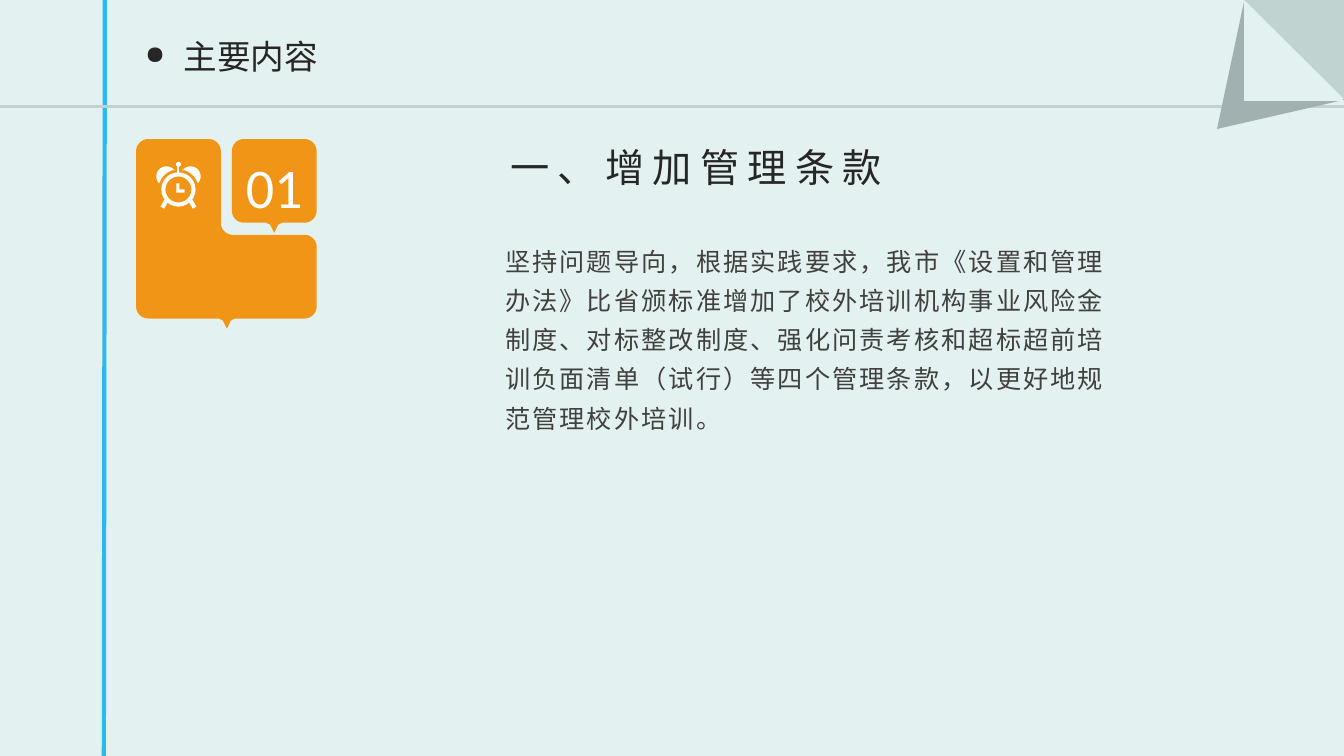
from math import cos, radians, sin

from lxml import etree
from pptx import Presentation
from pptx.dml.color import RGBColor
from pptx.enum.shapes import MSO_CONNECTOR, MSO_SHAPE
from pptx.enum.text import MSO_ANCHOR, MSO_AUTO_SIZE, PP_ALIGN
from pptx.oxml.ns import qn
from pptx.util import Inches, Pt

LINE = MSO_CONNECTOR.STRAIGHT
RECT, DONUT, OVAL = MSO_SHAPE.RECTANGLE, MSO_SHAPE.DONUT, MSO_SHAPE.OVAL
LEFT, CENTER = PP_ALIGN.LEFT, PP_ALIGN.CENTER
TOP, MIDDLE = MSO_ANCHOR.TOP, MSO_ANCHOR.MIDDLE
PALE = RGBColor(0xE3, 0xF1, 0xF0)
BLUE = RGBColor(0x2B, 0xBA, 0xEF)
RULE = RGBColor(0xC3, 0xD1, 0xD7)
FOLD = RGBColor(0xC1, 0xD3, 0xD1)
SHADE = RGBColor(0xA1, 0xB1, 0xB2)
ORANGE = RGBColor(0xF0, 0x95, 0x15)
WHITE = RGBColor(0xFF, 0xFF, 0xFF)
DARK = RGBColor(0x26, 0x26, 0x26)
GREY = RGBColor(0x40, 0x40, 0x40)
CJK = "Noto Sans CJK SC"
W, H = 13.33, 7.5

prs = Presentation()
prs.slide_width, prs.slide_height = Inches(W), Inches(H)
s = prs.slides.add_slide(prs.slide_layouts[1])


def arc(cx, cy, r, start, end):
    """Points in inches along a circle; degrees run clockwise from the right."""
    steps = 12
    angles = [radians(start + (end - start) * i / steps) for i in range(steps + 1)]
    return [(cx + r * cos(a), cy + r * sin(a)) for a in angles]


def paint(sp, color):
    sp.shadow.inherit = False
    sp.fill.solid()
    sp.fill.fore_color.rgb = color
    sp.line.fill.background()


paint(s.shapes.add_shape(RECT, 0, 0, prs.slide_width, prs.slide_height), PALE)

# Page rules and folded corner
page_lines = [
    (1.04, 0, 1.03, H, BLUE, 3),
    (0, 1.06, W, 1.06, RULE, 2.25),
]
corner = [
    ([(12.34, 0), (W, 0), (W, 0.98)], FOLD),
    ([(12.35, -0.04), (12.07, 1.28), (13.38, 0.98), (12.35, 0.99)], SHADE),
    ([(12.34, 0), (12.34, 1), (W, 1)], PALE),
]

# Speech bubbles: upper outline, left edge, bottom edge, tail position
R = 0.12
TAIL = [(0.08, 0), (0.04, 0.02), (0, 0.1), (-0.04, 0.02), (-0.08, 0)]
big_top = (arc(1.47, 1.5, R, 180, 270) + arc(2.07, 1.5, R, 270, 360)
           + arc(2.31, 2.21, R, 180, 90) + arc(3.02, 2.45, R, 270, 360))
small_top = arc(2.42, 1.5, R, 180, 270) + arc(3.02, 1.5, R, 270, 360)
bubbles = []
for top, left, bottom, tail_x in [(big_top, 1.35, 3.16, 2.25),
                                  (small_top, 2.3, 2.21, 2.72)]:
    outline = top + arc(3.02, bottom - R, R, 0, 90)
    outline += [(tail_x + dx, bottom + dy) for dx, dy in TAIL]
    outline += arc(left + R, bottom - R, R, 90, 180)
    bubbles.append((outline, ORANGE))

# Alarm clock: post, legs, hands and two bells around its centre
CX, CY = 1.77, 1.88
clock_lines = [(CX, 1.64, CX, 1.73, WHITE, 1.5)]
clock_lines += [(CX + d * 0.12, 1.99, CX + d * 0.16, 2.06, WHITE, 3) for d in (-1, 1)]
hands = [(1.75, 1.82), (1.78, 1.82), (1.78, 1.88), (1.83, 1.88), (1.83, 1.91), (1.75, 1.91)]
bell = arc(CX, CY, 0.2, -20, -75) + arc(1.89, 1.75, 0.1, -145, 40)
mirrored = [(2 * CX - x, y) for x, y in bell]
clock = [(points, WHITE) for points in (hands, bell, mirrored)]

drawn = []
for strokes, areas in [(page_lines, corner + bubbles), (clock_lines, clock)]:
    for x1, y1, x2, y2, color, width in strokes:
        cn = s.shapes.add_connector(LINE, Inches(x1), Inches(y1), Inches(x2), Inches(y2))
        cn.line.color.rgb = color
        cn.line.width = Pt(width)
        etree.SubElement(cn._element.spPr, qn("a:effectLst"))
    for points, color in areas:
        pts = [(Inches(x), Inches(y)) for x, y in points]
        fb = s.shapes.build_freeform(*pts[0])
        fb.add_line_segments(pts[1:], close=True)
        sp = fb.convert_to_shape()
        paint(sp, color)
        drawn.append(sp)
number = drawn[len(corner) + 1]

for kind, cy, r in [(DONUT, CY, 0.17), (OVAL, 1.63, 0.025)]:
    sp = s.shapes.add_shape(kind, Inches(CX - r), Inches(cy - r), Inches(2 * r), Inches(2 * r))
    if kind == DONUT:
        sp.adjustments[0] = 0.12
    paint(sp, WHITE)

# Placeholders go in front of the page background
title, body = s.shapes.title, s.placeholders[1]
for sp in (title, body):
    s.shapes._spTree.append(sp._element)

# Text: shape, place, wording, font, size, colour, tracking, alignment, anchor, wrap
heading = s.shapes.add_textbox(0, 0, 0, 0)
texts = [
    (title, (1.34, 0.31, 3.57, 0.5), "主要内容", CJK, 24, DARK, 0, LEFT, TOP, True),
    (number, None, "01", "Calibri", 40, WHITE, 0, CENTER, MIDDLE, True),
    (heading, (4.92, 1.37, 3.97, 0.57), "一、增加管理条款", CJK, 28, DARK, 6, CENTER, TOP, False),
    (body, (4.91, 2.3, 6.22, 2.07),
     "坚持问题导向，根据实践要求，我市《设置和管理办法》比省颁标准增加了校外培训机构"
     "事业风险金制度、对标整改制度、强化问责考核和超标超前培训负面清单（试行）等四个"
     "管理条款，以更好地规范管理校外培训。", CJK, 18, GREY, 1.5, LEFT, TOP, True),
]
for sp, place, text, font, size, color, tracking, align, anchor, wrap in texts:
    if place:
        sp.left, sp.top, sp.width, sp.height = [Inches(v) for v in place]
    tf = sp.text_frame
    tf.auto_size = MSO_AUTO_SIZE.NONE
    tf.word_wrap = wrap
    tf.vertical_anchor = anchor
    p = tf.paragraphs[0]
    p.alignment = align
    r = p.add_run()
    r.text = text
    r.font.name, r.font.size, r.font.color.rgb = font, Pt(size), color
    rPr = r.font._element
    etree.SubElement(rPr, qn("a:ea")).set("typeface", font)
    if tracking:
        rPr.set("spc", str(int(tracking * 100)))

pPr = title.text_frame.paragraphs[0]._p.get_or_add_pPr()
indent = Inches(0.38)
pPr.set("marL", str(int(indent)))
pPr.set("indent", str(-int(indent)))
etree.SubElement(pPr, qn("a:buSzPct")).set("val", "75000")
etree.SubElement(pPr, qn("a:buChar")).set("char", "●")

p = body.text_frame.paragraphs[0]
pPr = p._p.get_or_add_pPr()
pPr.set("marL", "0")
pPr.set("indent", "0")
etree.SubElement(pPr, qn("a:buNone"))
p.line_spacing = 1.3
p.space_before = Pt(0)

prs.save("out.pptx")
